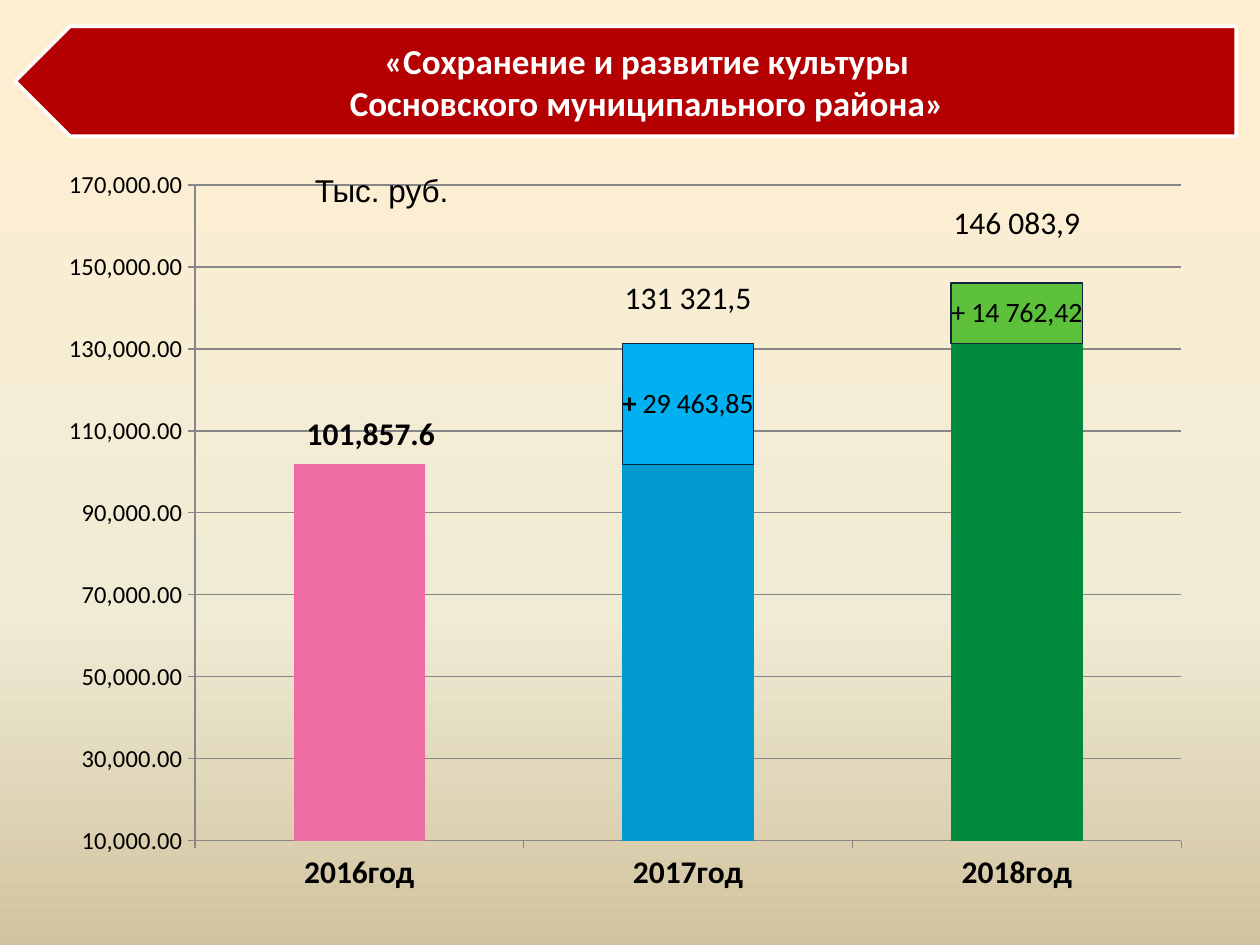
from copy import deepcopy

from pptx import Presentation
from pptx.chart.data import CategoryChartData
from pptx.dml.color import RGBColor
from pptx.enum.chart import XL_CHART_TYPE, XL_TICK_MARK
from pptx.enum.shapes import MSO_SHAPE
from pptx.enum.text import MSO_ANCHOR, PP_ALIGN
from pptx.oxml import parse_xml
from pptx.oxml.ns import nsdecls, qn
from pptx.util import Inches, Pt

STACKED = XL_CHART_TYPE.COLUMN_STACKED
TICK_OUT, TICK_NONE = XL_TICK_MARK.OUTSIDE, XL_TICK_MARK.NONE
PENTAGON = MSO_SHAPE.PENTAGON
MIDDLE, CENTER = MSO_ANCHOR.MIDDLE, PP_ALIGN.CENTER

THEME = {
    "font": "Calibri", "unit_font": "Arial",
    "text": "000000", "title": "FFFFFF", "banner": "B40000",
    "grid": "878787", "outline": "0F243E",
    "background": [(0, "FFEFD1"), (0.65, "F0EBD5"), (1, "D1C39F")],
    "title_size": 20, "unit_size": 18, "year_size": 18, "scale_size": 14,
}

TITLE = ["«Сохранение и развитие культуры", "Сосновского муниципального района»"]
UNIT = "Тыс. руб."
YEARS = ["2016год", "2017год", "2018год"]
SCALE = {"minimum_scale": 10000, "maximum_scale": 170000, "major_unit": 20000}
PLOT_AREA = {"x": 0.13, "y": 0.04, "w": 0.85, "h": 0.87}
SERIES = [
    {"name": "Series 1", "values": [101857.6, 101857.6, 131321.5],
     "format": "#,##0.0", "color": "4F81BD", "size": 18, "outlined": False,
     "points": {0: "EE6CA4", 1: "009AD0", 2: "008A3E"},
     "labels": {0: None, 1: [("131 321,5", False)], 2: [("146 083,9", False)]},
     "offsets": {0: (0.01, -0.29), 1: (0, -0.47), 2: (0, -0.49)}},
    {"name": "Series 2", "values": [None, 29463.85, 14762.42],
     "format": "#,##0.00", "color": "C0504D", "size": 16, "outlined": True,
     "points": {1: "00B0F0", 2: "5DC03A"},
     "labels": {1: [("+", True), (" 29 463,85", False)], 2: [("+ 14 762,42", False)]},
     "offsets": {}},
]


def rgb(value):
    return RGBColor.from_string(value)


def set_font(font, size, bold=False, color=THEME["text"], name=THEME["font"]):
    font.size, font.bold, font.name = Pt(size), bold, name
    font.color.rgb = rgb(color)


def paint(fill, color):
    fill.solid()
    fill.fore_color.rgb = rgb(color)


def layout_xml(values, inner=False):
    target = '<c:layoutTarget val="inner"/>' if inner else ""
    modes = '<c:xMode val="edge"/><c:yMode val="edge"/>' if inner else ""
    sizes = "".join(f'<c:{key} val="{value}"/>' for key, value in values.items())
    return parse_xml(f'<c:layout {nsdecls("c")}><c:manualLayout>{target}{modes}{sizes}'
                     '</c:manualLayout></c:layout>')


def set_background(slide):
    fill = slide.background.fill
    fill.gradient()
    fill.gradient_angle = 270
    stops = slide.element.find(".//" + qn("a:gsLst"))
    while len(stops) < len(THEME["background"]):
        stops.append(deepcopy(stops[0]))
    for stop, (position, color) in zip(fill.gradient_stops, THEME["background"]):
        stop.position = position
        stop.color.rgb = rgb(color)


def add_banner(slide):
    banner = slide.shapes.add_shape(PENTAGON, Inches(0.12), Inches(0.21), Inches(9.69), Inches(0.87))
    banner.rotation = 180
    banner.shadow.inherit = False
    paint(banner.fill, THEME["banner"])
    banner.line.color.rgb = rgb(THEME["title"])
    banner.line.width = Pt(2)

    title = slide.shapes.title
    title.left, title.top, title.width, title.height = map(Inches, (0.33, 0.21, 9.47, 0.87))
    slide.shapes._spTree.append(title._element)
    frame = title.text_frame
    frame.text = "\n".join(TITLE)
    frame.vertical_anchor, frame.word_wrap = MIDDLE, True
    frame.margin_left, frame.margin_right = Inches(0.38), Inches(0.24)
    frame.margin_top = frame.margin_bottom = Inches(0.08)
    for paragraph in frame.paragraphs:
        paragraph.alignment = CENTER
        set_font(paragraph.font, THEME["title_size"], True, THEME["title"])


def style_axes(chart):
    years, amounts = chart.category_axis, chart.value_axis
    for axis, size, bold in ((years, THEME["year_size"], True), (amounts, THEME["scale_size"], False)):
        axis.major_tick_mark, axis.minor_tick_mark = TICK_OUT, TICK_NONE
        axis.format.line.color.rgb = rgb(THEME["grid"])
        set_font(axis.tick_labels.font, size, bold)
    for setting, value in SCALE.items():
        setattr(amounts, setting, value)
    amounts.tick_labels.number_format = "#,##0.00"
    amounts.tick_labels.number_format_is_linked = False
    amounts.major_gridlines.format.line.color.rgb = rgb(THEME["grid"])


def style_series(series, content):
    paint(series.format.fill, content["color"])
    labels = series.data_labels
    labels.show_value = True
    labels.number_format, labels.number_format_is_linked = content["format"], False
    set_font(labels.font, content["size"], True)
    for index, color in content["points"].items():
        point = series.points[index]
        paint(point.format.fill, color)
        if content["outlined"]:
            point.format.line.color.rgb = rgb(THEME["outline"])
            point.format.line.width = Pt(0.75)
        runs = content["labels"][index]
        if runs is None:
            set_font(point.data_label.font, content["size"], True)
            continue
        frame = point.data_label.text_frame
        frame.word_wrap = False
        for text, bold in runs:
            run = frame.paragraphs[0].add_run()
            run.text = text
            set_font(run.font, content["size"], bold)
    for leader_lines in series._element.iter(qn("c:showLeaderLines")):
        leader_lines.set("val", "0")
    for label in series._element.iter(qn("c:dLbl")):
        index = int(label.find(qn("c:idx")).get("val"))
        if index in content["offsets"]:
            label.insert(1, layout_xml(dict(zip("xy", content["offsets"][index]))))


def add_budget_chart(slide):
    data = CategoryChartData()
    data.categories = YEARS
    for content in SERIES:
        data.add_series(content["name"], content["values"], content["format"])
    chart = slide.shapes.add_chart(
        STACKED, Inches(0.35), Inches(1.23), Inches(9.21), Inches(5.98), data).chart
    chart.has_legend = chart.has_title = False
    set_font(chart.font, 10)
    plot = chart.plots[0]
    plot.gap_width, plot.overlap, plot.vary_by_categories = 150, 100, False
    plot_area = chart._chartSpace.find(".//" + qn("c:plotArea"))
    for automatic in plot_area.findall(qn("c:layout")):
        plot_area.remove(automatic)
    plot_area.insert(0, layout_xml(PLOT_AREA, inner=True))
    style_axes(chart)
    for series, content in zip(plot.series, SERIES):
        style_series(series, content)


def add_unit(slide):
    frame = slide.shapes.add_textbox(Inches(2.4), Inches(1.31), Inches(1.27), Inches(0.4)).text_frame
    frame.word_wrap = False
    frame.text = UNIT
    set_font(frame.paragraphs[0].font, THEME["unit_size"], name=THEME["unit_font"])


def main():
    """Build the culture budget slide."""
    presentation = Presentation()
    presentation.slide_width, presentation.slide_height = Inches(10), Inches(7.5)
    slide = presentation.slides.add_slide(presentation.slide_layouts[5])
    set_background(slide)
    add_banner(slide)
    add_budget_chart(slide)
    add_unit(slide)
    presentation.save("out.pptx")


if __name__ == "__main__":
    main()
